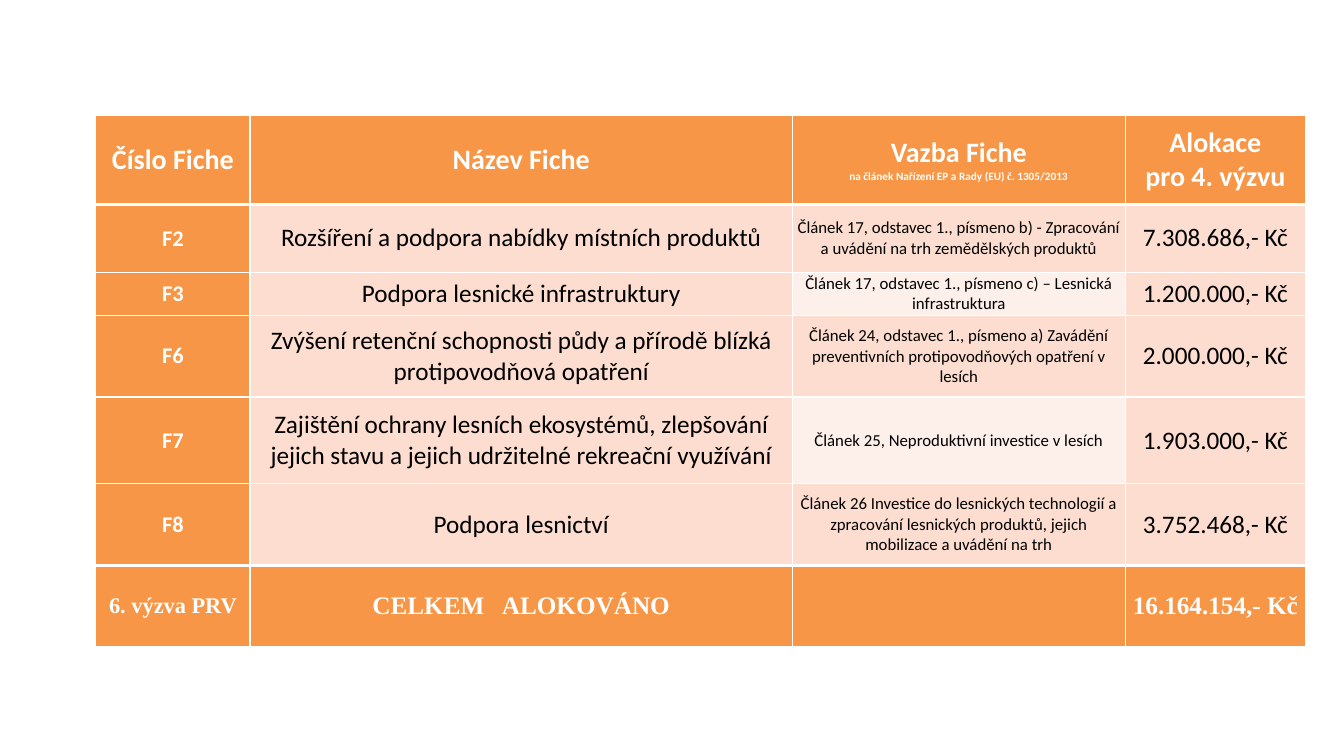
from lxml import etree
from pptx import Presentation
from pptx.dml.color import RGBColor
from pptx.enum.text import MSO_ANCHOR, PP_ALIGN
from pptx.oxml.ns import qn
from pptx.util import Pt

PX = 9144
CENTER = PP_ALIGN.CENTER
MIDDLE = MSO_ANCHOR.MIDDLE
ORANGE, PEACH, PALE = "F79646", "FCDDCF", "FDEFE9"
WHITE, BLACK = "FFFFFF", "000000"


def rgb(value):
    return RGBColor.from_string(value)


def set_borders(cell, widths):
    tcPr = cell._tc.get_or_add_tcPr()
    for side, width in widths.items():
        ln = etree.SubElement(tcPr, qn(f"a:ln{side}"), w=str(Pt(width)))
        fill = etree.SubElement(ln, qn("a:solidFill"))
        etree.SubElement(fill, qn("a:srgbClr"), val=WHITE)


col_widths = [153, 538, 330, 179]
row_heights = [89, 67, 43, 81, 86, 81, 81]
body_sizes = [16, 18, 12, 18]
rows = [
    ["Číslo Fiche", "Název Fiche",
     "Vazba Fiche\nna článek Nařízení EP a Rady (EU) č. 1305/2013",
     "Alokace\npro 4. výzvu"],
    ["F2", "Rozšíření a podpora nabídky místních produktů",
     "Článek 17, odstavec 1., písmeno b) - Zpracování a uvádění na trh zemědělských produktů",
     "7.308.686,- Kč"],
    ["F3", "Podpora lesnické infrastruktury",
     "Článek 17, odstavec 1., písmeno c) – Lesnická infrastruktura",
     "1.200.000,- Kč"],
    ["F6", "Zvýšení retenční schopnosti půdy a přírodě blízká protipovodňová opatření",
     "Článek 24, odstavec 1., písmeno a) Zavádění preventivních protipovodňových opatření v lesích",
     "2.000.000,- Kč"],
    ["F7", "Zajištění ochrany lesních ekosystémů, zlepšování jejich stavu a jejich udržitelné rekreační využívání",
     "Článek 25, Neproduktivní investice v lesích",
     "1.903.000,- Kč"],
    ["F8", "Podpora lesnictví",
     "Článek 26 Investice do lesnických technologií a zpracování lesnických produktů, jejich mobilizace a uvádění na trh",
     "3.752.468,- Kč"],
    ["6. výzva PRV", "CELKEM   ALOKOVÁNO", "", "16.164.154,- Kč"],
]
last = len(rows) - 1

prs = Presentation()
prs.slide_width = 1333 * PX
prs.slide_height = 750 * PX
s = prs.slides.add_slide(prs.slide_layouts[6])

table = s.shapes.add_table(
    len(rows), len(col_widths), 95 * PX, 114 * PX,
    sum(col_widths) * PX, sum(row_heights) * PX).table
table.horz_banding = False
table.last_row = True
table.first_col = True
for col, width in zip(table.columns, col_widths):
    col.width = width * PX
for row, height in zip(table.rows, row_heights):
    row.height = height * PX

for i, texts in enumerate(rows):
    for j, text in enumerate(texts):
        cell = table.cell(i, j)
        cell.margin_left = cell.margin_right = 4 * PX
        cell.margin_top = cell.margin_bottom = 0
        cell.vertical_anchor = MIDDLE
        set_borders(cell, {"L": 1, "R": 1,
                           "T": 3 if i in (1, last) else 1,
                           "B": 3 if i in (0, last - 1) else 1})
        strong = i in (0, last) or j == 0
        band = PALE if j == 2 and i % 2 == 0 else PEACH
        cell.fill.solid()
        cell.fill.fore_color.rgb = rgb(ORANGE if strong else band)
        cell.text_frame.text = text
        for k, p in enumerate(cell.text_frame.paragraphs):
            p.alignment = CENTER
            size = 20 if i == 0 else body_sizes[j]
            p.font.size = Pt(8 if (i, j, k) == (0, 2, 1) else size)
            p.font.name = "Times New Roman" if i == last else "Calibri"
            p.font.bold = strong
            p.font.color.rgb = rgb(WHITE if strong else BLACK)

prs.save("out.pptx")
